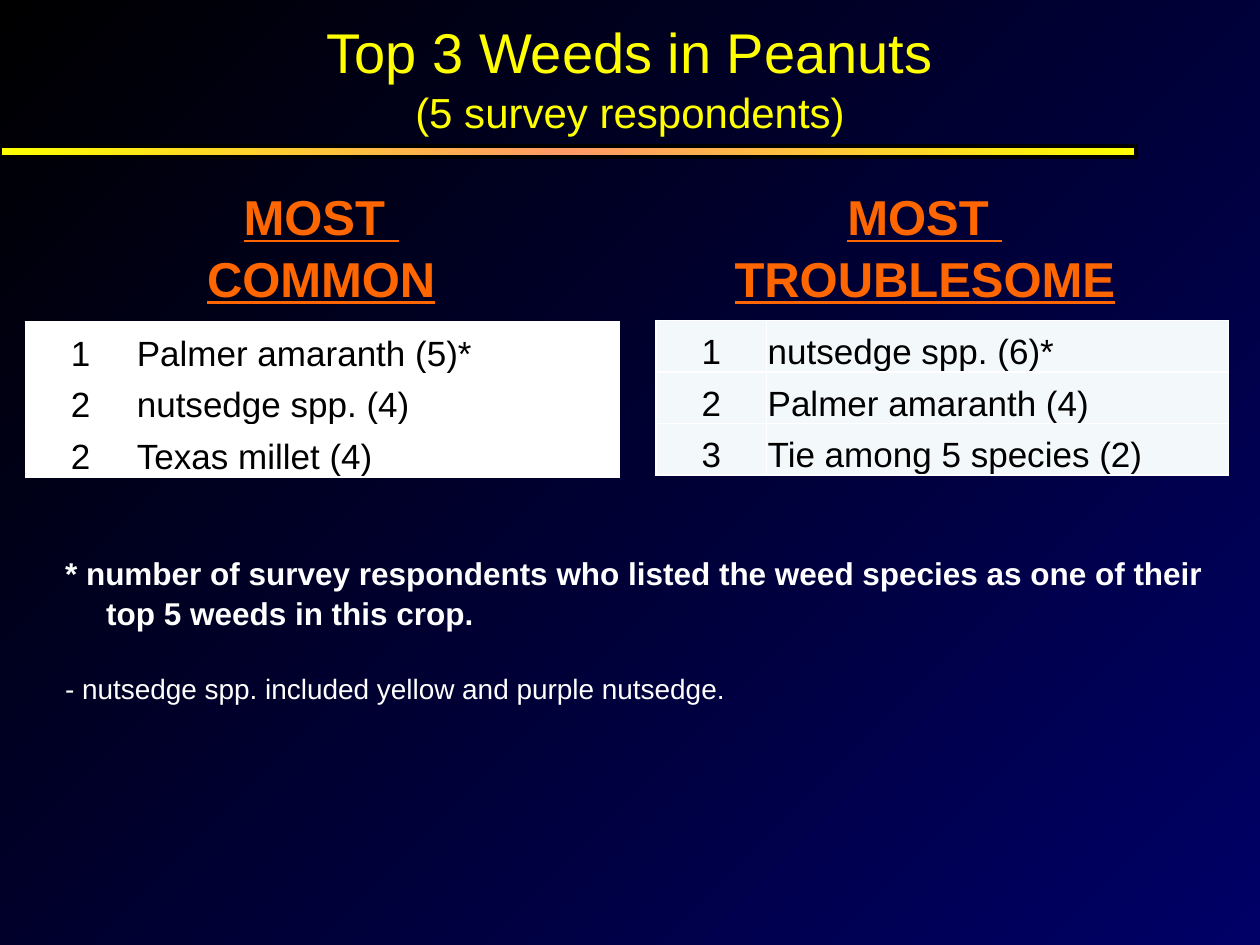
from copy import deepcopy
from dataclasses import dataclass

from lxml import etree
from pptx import Presentation
from pptx.dml.color import RGBColor
from pptx.enum.shapes import MSO_SHAPE
from pptx.enum.text import MSO_ANCHOR, MSO_AUTO_SIZE, PP_ALIGN
from pptx.oxml.ns import qn
from pptx.util import Pt

CENTER, LEFT = PP_ALIGN.CENTER, PP_ALIGN.LEFT
MIDDLE, BOTTOM = MSO_ANCHOR.MIDDLE, MSO_ANCHOR.BOTTOM
NO_FIT = MSO_AUTO_SIZE.NONE
RECTANGLE = MSO_SHAPE.RECTANGLE


@dataclass(frozen=True)
class Theme:
    font: str = "Arial"
    black: str = "000000"
    navy: str = "000066"
    yellow: str = "FFFF00"
    peach: str = "FF9966"
    orange: str = "FF6600"
    white: str = "FFFFFF"
    pale: str = "F3F9FA"
    title_size: int = 32
    subtitle_size: int = 24
    heading_size: int = 28
    table_size: int = 20
    note_size: int = 18
    remark_size: int = 16


THEME = Theme()
LINE_SPACING = 1.05
NUMBER_WIDTH, ROW_HEIGHT = 63, 29.5


def set_values(target, values):
    for name, value in values.items():
        setattr(target, name, value)


def write(para, text, size, color, align=LEFT, spacing=LINE_SPACING, **font):
    set_values(para, {"alignment": align, "line_spacing": spacing,
                      "space_before": Pt(0)})
    span = para.add_run()
    span.text = text
    span.font.color.rgb = RGBColor.from_string(color)
    set_values(span.font, {"name": THEME.font, "size": Pt(size), **font})


def next_para(frame, index):
    return frame.add_paragraph() if index else frame.paragraphs[0]


def place(shape, box):
    set_values(shape, dict(zip(("left", "top", "width", "height"), map(Pt, box))))


def fill_gradient(fill, element, colors, angle):
    """Spread the colours evenly along the gradient."""
    fill.gradient()
    stop_list = next(element.iter(qn("a:gsLst")))
    while len(stop_list) < len(colors):
        stop_list.append(deepcopy(stop_list[-1]))
    for index, (stop, color) in enumerate(zip(fill.gradient_stops, colors)):
        stop.position = index / (len(colors) - 1)
        stop.color.rgb = RGBColor.from_string(color)
    fill.gradient_angle = angle


def add_background(page):
    background = page.background
    fill_gradient(background.fill, page.element, (THEME.black, THEME.navy), 315)


def add_rule(page, box):
    rule = page.shapes.add_shape(RECTANGLE, *map(Pt, box))
    rule.shadow.inherit = False
    fill_gradient(rule.fill, rule.element,
                  (THEME.yellow, THEME.peach, THEME.yellow), 0)
    rule.line.color.rgb = RGBColor.from_string(THEME.black)
    rule.line.width = Pt(2.25)


def add_title(page, box, title, subtitle):
    holder = page.shapes.title
    place(holder, box)
    frame = holder.text_frame
    set_values(frame, {"vertical_anchor": MIDDLE, "auto_size": NO_FIT})
    lines = ((title, THEME.title_size), (subtitle, THEME.subtitle_size))
    for index, (text, size) in enumerate(lines):
        write(next_para(frame, index), text, size, THEME.yellow, CENTER)


def add_heading(page, box, lines):
    frame = page.shapes.add_textbox(*map(Pt, box)).text_frame
    frame.word_wrap = True
    for index, text in enumerate(lines):
        write(next_para(frame, index), text, THEME.heading_size, THEME.orange,
              CENTER, bold=True, underline=True)


def add_borders(cell, color, width):
    properties = cell._tc.get_or_add_tcPr()
    for index, side in enumerate(("lnL", "lnR", "lnT", "lnB")):
        line = etree.Element(qn(f"a:{side}"), w=str(Pt(width)))
        fill = etree.SubElement(line, qn("a:solidFill"))
        etree.SubElement(fill, qn("a:srgbClr"), val=color)
        properties.insert(index, line)


def add_ranking(page, box, rows, color):
    """Add a table of rank numbers and weeds."""
    left, top, width = box
    table = page.shapes.add_table(len(rows), 2, Pt(left), Pt(top), Pt(width),
                                  Pt(ROW_HEIGHT * len(rows))).table
    set_values(table, {"first_row": False, "horz_banding": False})
    table.columns[0].width = Pt(NUMBER_WIDTH)
    table.columns[1].width = Pt(width - NUMBER_WIDTH)
    for row, values in enumerate(rows):
        for column, (text, align) in enumerate(zip(values, (CENTER, LEFT))):
            cell = table.cell(row, column)
            set_values(cell, {"vertical_anchor": BOTTOM, "margin_left": Pt(0.7),
                              "margin_right": Pt(0.7), "margin_top": Pt(0.7),
                              "margin_bottom": Pt(0)})
            cell.fill.solid()
            cell.fill.fore_color.rgb = RGBColor.from_string(color)
            add_borders(cell, THEME.white, 1)
            write(cell.text_frame.paragraphs[0], text, THEME.table_size,
                  THEME.black, align, spacing=1.0)


def add_notes_list(page, box, notes):
    holder = page.placeholders[1]
    place(holder, box)
    frame = holder.text_frame
    frame.auto_size = NO_FIT
    for index, (text, size, bold, indent, gap) in enumerate(notes):
        para = next_para(frame, index)
        write(para, text, size, THEME.white, bold=bold)
        para.space_before = Pt(gap)
        properties = para._p.get_or_add_pPr()
        properties.set("marL", str(Pt(indent)))
        properties.set("indent", str(Pt(-indent)))
        etree.SubElement(properties, qn("a:buNone"))


def build_weed_slide(deck):
    page = deck.slides.add_slide(deck.slide_layouts[1])
    add_background(page)
    add_rule(page, (0, 83.5, 649, 6))
    add_title(page, (24, 0, 672, 86.4),
              "Top 3 Weeds in Peanuts", "(5 survey respondents)")
    add_heading(page, (97, 101.5, 173, 75), ("MOST ", "COMMON"))
    add_heading(page, (411, 101.5, 235, 75), ("MOST ", "TROUBLESOME"))
    add_ranking(page, (14.5, 184, 339.5),
                (("1", "Palmer amaranth (5)*"), ("2", "nutsedge spp. (4)"),
                 ("2", "Texas millet (4)")), THEME.white)
    add_ranking(page, (375, 183, 327),
                (("1", "nutsedge spp. (6)*"), ("2", "Palmer amaranth (4)"),
                 ("3", "Tie among 5 species (2)")), THEME.pale)
    add_notes_list(page, (30, 312, 666, 92), (
        ("* number of survey respondents who listed the weed species as one of "
         "their top 5 weeds in this crop.", THEME.note_size, True, 23.5, 0),
        ("- nutsedge spp. included yellow and purple nutsedge.",
         THEME.remark_size, False, 9, 21.7)))


def main():
    deck = Presentation()
    set_values(deck, {"slide_width": Pt(720), "slide_height": Pt(540)})
    build_weed_slide(deck)
    deck.save("out.pptx")


if __name__ == "__main__":
    main()
